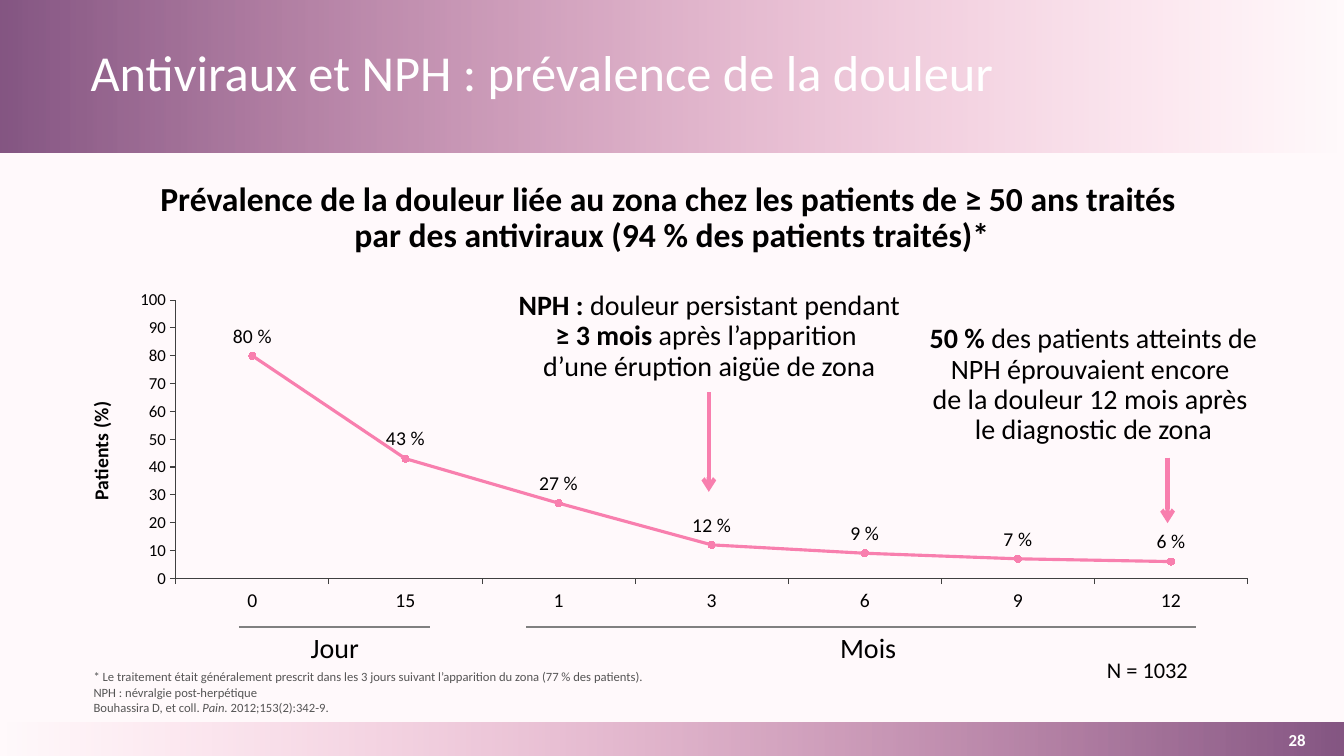
from lxml import etree
from pptx import Presentation
from pptx.chart.data import CategoryChartData
from pptx.dml.color import RGBColor
from pptx.enum.chart import XL_CHART_TYPE, XL_LABEL_POSITION, XL_MARKER_STYLE, XL_TICK_MARK
from pptx.enum.shapes import MSO_CONNECTOR, MSO_SHAPE
from pptx.enum.text import MSO_ANCHOR as ANCHOR, PP_ALIGN as ALIGN
from pptx.oxml import parse_xml
from pptx.oxml.ns import nsdecls, qn
from pptx.util import Pt

PX = 9144
FONT = "Calibri"
BLACK = RGBColor(0x00, 0x00, 0x00)
WHITE = RGBColor(0xFF, 0xFF, 0xFF)
PLUM = RGBColor(0x85, 0x56, 0x83)
PINK = RGBColor(0xF8, 0x7F, 0xAE)
BLUSH = RGBColor(0xFF, 0xF9, 0xFB)
AXIS_GRAY = RGBColor(0x40, 0x40, 0x40)
NOTE_GRAY = RGBColor(0x55, 0x55, 0x55)
RULE_GRAY = RGBColor(0x80, 0x80, 0x80)

deck = Presentation()
deck.slide_width, deck.slide_height = 1333 * PX, 750 * PX
slide = deck.slides.add_slide(deck.slide_layouts[6])
slide.background.fill.solid()
slide.background.fill.fore_color.rgb = BLUSH


def write(paragraphs, left, top, width, height, size=20, color=BLACK, align=ALIGN.CENTER,
          anchor=ANCHOR.TOP, spacing=0.9, inset=(0, 0), wrap=True):
    box = slide.shapes.add_textbox(left * PX, top * PX, width * PX, height * PX)
    frame = box.text_frame
    frame.word_wrap = wrap
    frame.vertical_anchor = anchor
    frame.margin_left = frame.margin_right = inset[0] * PX
    frame.margin_top = frame.margin_bottom = inset[1] * PX
    for index, runs in enumerate(paragraphs):
        paragraph = frame.add_paragraph() if index else frame.paragraphs[0]
        paragraph.alignment = align
        paragraph.line_spacing = spacing
        for text, style in runs:
            for row, line in enumerate(text.split("\n")):
                if row:
                    paragraph.add_line_break()
                run = paragraph.add_run()
                run.text = line
                run.font.name, run.font.size = FONT, Pt(size)
                run.font.color.rgb = color
                run.font.bold = style == "bold"
                run.font.italic = style == "italic"


def draw_line(x1, y1, x2, y2, color, weight, arrow=False):
    line = slide.shapes.add_connector(MSO_CONNECTOR.STRAIGHT, x1 * PX, y1 * PX, x2 * PX, y2 * PX)
    line.line.color.rgb = color
    line.line.width = Pt(weight)
    properties = line._element.spPr
    if arrow:
        etree.SubElement(properties.find(qn("a:ln")), qn("a:tailEnd"), type="arrow")
    etree.SubElement(properties, qn("a:effectLst"))


for top, height, angle in [(717, 33, 180), (0, 151, 0)]:
    band = slide.shapes.add_shape(MSO_SHAPE.RECTANGLE, 0, top * PX, 1333 * PX, height * PX)
    band.shadow.inherit = False
    band.line.fill.background()
    band.fill.gradient()
    band.fill.gradient_angle = angle
    for stop, color, position in zip(band.fill.gradient_stops, (PLUM, PINK), (0, 1)):
        stop.color.rgb = color
        stop.position = position
    clear_color = band._element.spPr.findall(".//" + qn("a:srgbClr"))[-1]
    etree.SubElement(clear_color, qn("a:alpha"), val="0")

prevalence = CategoryChartData(number_format='0" %"')
prevalence.categories = ["0", "15", "1", "3", "6", "9", "12"]
prevalence.add_series("Patients (%)", [80, 43, 27, 12, 9, 7, 6])
chart = slide.shapes.add_chart(XL_CHART_TYPE.LINE_MARKERS, 83 * PX, 257 * PX,
                               1172 * PX, 368 * PX, prevalence).chart
chart.has_legend = False
chart.has_title = False
chart.font.name, chart.font.size = FONT, Pt(14)
chart.font.color.rgb = BLACK

plot_area = chart._chartSpace.chart.plotArea
for layout in plot_area.findall(qn("c:layout")):
    plot_area.remove(layout)
plot_area.insert(0, parse_xml(
    f'<c:layout {nsdecls("c")}><c:manualLayout><c:layoutTarget val="inner"/>'
    '<c:xMode val="edge"/><c:yMode val="edge"/><c:x val="0.078"/><c:y val="0.111"/>'
    '<c:w val="0.907"/><c:h val="0.75"/></c:manualLayout></c:layout>'))

for axis, size in [(chart.category_axis, 14), (chart.value_axis, 12)]:
    axis.has_major_gridlines = False
    axis.major_tick_mark = XL_TICK_MARK.OUTSIDE
    axis.minor_tick_mark = XL_TICK_MARK.NONE
    axis.format.line.color.rgb = AXIS_GRAY
    axis.format.line.width = Pt(0.75)
    axis.tick_labels.font.name = FONT
    axis.tick_labels.font.size = Pt(size)
    axis.tick_labels.font.color.rgb = BLACK

patients = chart.value_axis
patients.minimum_scale, patients.maximum_scale, patients.major_unit = 0, 100, 10
patients.tick_labels.number_format = "0"
patients.tick_labels.number_format_is_linked = False
patients_title = patients.axis_title.text_frame
patients_title.text = "Patients (%)"
patients_title._txBody.find(qn("a:bodyPr")).set("rot", "-5400000")
title_font = patients_title.paragraphs[0].runs[0].font
title_font.name, title_font.size, title_font.bold = FONT, Pt(14), True
title_font.color.rgb = BLACK

chart.plots[0].vary_by_categories = False
pain = chart.plots[0].series[0]
pain.smooth = False
pain.format.line.color.rgb = PINK
pain.format.line.width = Pt(2.25)
pain.marker.style, pain.marker.size = XL_MARKER_STYLE.CIRCLE, 5
pain.marker.format.fill.solid()
pain.marker.format.fill.fore_color.rgb = PINK
pain.marker.format.line.color.rgb = PINK
percents = pain.data_labels
percents.show_value = True
percents.position = XL_LABEL_POSITION.ABOVE
percents.number_format = '0" %"'
percents.number_format_is_linked = False
percents.font.name, percents.font.size, percents.font.bold = FONT, Pt(14), False
percents.font.color.rgb = BLACK

write([[("Antiviraux et NPH : prévalence de la douleur", "")]], 80, 18, 1147, 114,
      size=36, color=WHITE, align=ALIGN.LEFT, anchor=ANCHOR.MIDDLE, inset=(10, 5))
write([[("* Le traitement était généralement prescrit dans les 3 jours suivant "
         "l’apparition du zona (77 % des patients).", "")],
       [("NPH : névralgie post-herpétique", "")],
       [("Bouhassira D, et coll. ", ""), ("Pain.", "italic"), (" 2012;153(2):342-9.", "")]],
      83, 647, 1167, 67, size=9, color=NOTE_GRAY, align=ALIGN.LEFT, anchor=ANCHOR.BOTTOM,
      spacing=1.0, inset=(10, 5))
write([[("28", "bold")]], 1240, 717, 93, 33, size=12, color=WHITE,
      anchor=ANCHOR.MIDDLE, spacing=1.0)
write([[("Prévalence de la douleur liée au zona chez les patients de ≥ 50 ans traités \n"
         "par des antiviraux (94 % des patients traités)*", "bold")]],
      152, 181, 1029, 73, size=24, wrap=False)
write([[("NPH : ", "bold"), ("douleur persistant pendant ", ""), ("≥ 3 mois", "bold"),
        (" après l’apparition \nd’une éruption aigüe de zona", "")]], 508, 289, 391, 91)
write([[("50 % ", "bold"), ("des patients atteints de NPH éprouvaient encore \n"
                            "de la douleur 12 mois après \nle diagnostic de zona", "")]],
      908, 322, 353, 121)
write([[("N = 1032", "")]], 1062, 654, 152, 24, size=16)

for period, label_left, start, end in [("Jour", 256, 237, 427), ("Mois", 785, 522, 1186)]:
    write([[(period, "")]], label_left, 629, 152, 30)
    draw_line(start, 622, end, 622, RULE_GRAY, 1)

for x, start, end in [(703, 389, 488), (1158, 454, 519)]:
    draw_line(x, start, x, end, PINK, 3, arrow=True)

deck.save("out.pptx")
